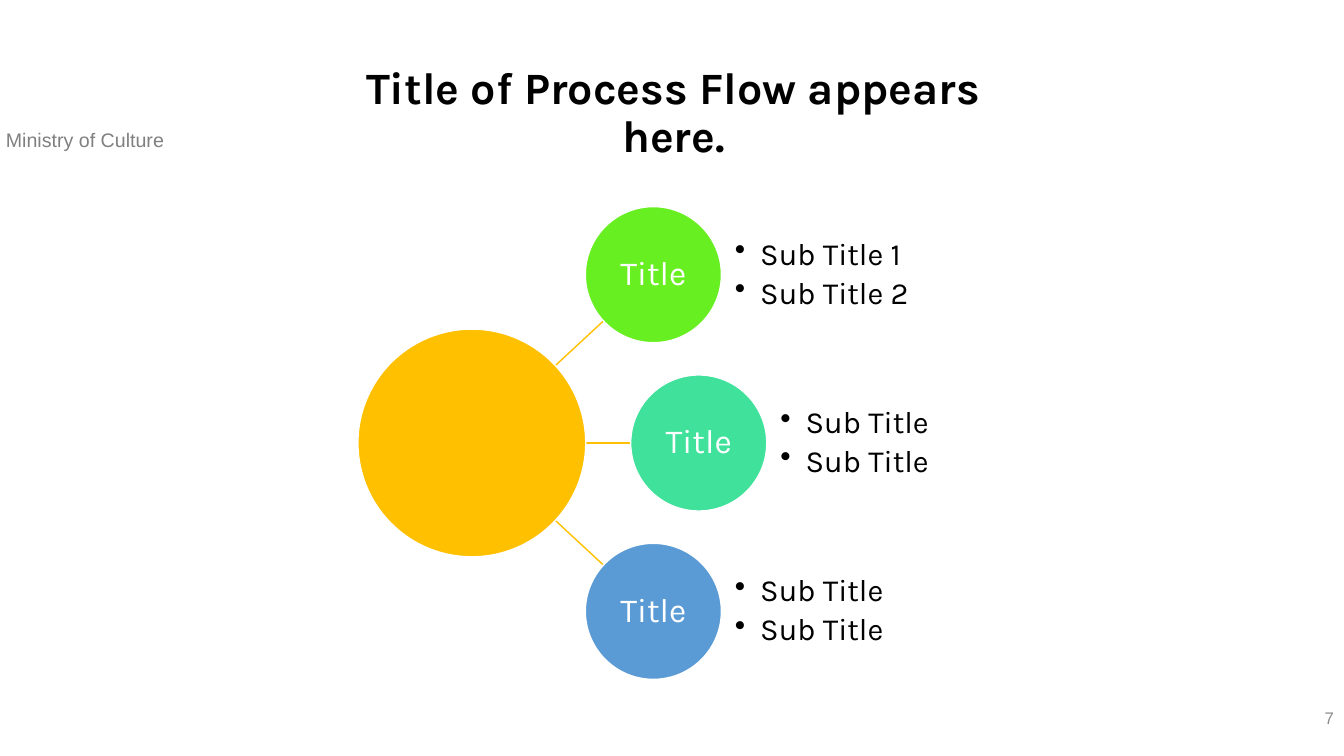
"""Build a slide with a radial process flow: one hub, three titled nodes and their points."""
from math import hypot

from lxml import etree
from pptx import Presentation
from pptx.dml.color import RGBColor
from pptx.enum.shapes import MSO_CONNECTOR, MSO_SHAPE
from pptx.enum.text import MSO_ANCHOR, PP_ALIGN
from pptx.oxml.ns import qn
from pptx.util import Inches, Pt

OVAL = MSO_SHAPE.OVAL
STRAIGHT = MSO_CONNECTOR.STRAIGHT
TOP, MIDDLE = MSO_ANCHOR.TOP, MSO_ANCHOR.MIDDLE
LEFT, CENTER, RIGHT = PP_ALIGN.LEFT, PP_ALIGN.CENTER, PP_ALIGN.RIGHT

WHITE = RGBColor(0xFF, 0xFF, 0xFF)
BLACK = RGBColor(0x00, 0x00, 0x00)
GRAY = RGBColor(0x80, 0x80, 0x80)
PALE_GRAY = RGBColor(0x8C, 0x8C, 0x8C)
AMBER = RGBColor(0xFF, 0xC0, 0x00)
LIME = RGBColor(0x67, 0xEF, 0x21)
MINT = RGBColor(0x3F, 0xE1, 0x9B)
BLUE = RGBColor(0x5B, 0x9B, 0xD5)

HEADING_FONT, FOOTER_FONT = "Karla", "Arial"
FLOW_BOX = (3.55, 2.05, 6.23, 4.69)
HUB_SIZE, NODE_SIZE = 2.26, 1.35
NODES = [
    ("Title", LIME, ["Sub Title 1", "Sub Title 2"]),
    ("Title", MINT, ["Sub Title", "Sub Title"]),
    ("Title", BLUE, ["Sub Title", "Sub Title"]),
]
NODE_REACH = [1.8, 2.25, 1.8]


def style_paragraph(para, text, size, color, align, font=HEADING_FONT, bold=False):
    """Fill a paragraph with text in one style."""
    para.text = text
    para.alignment = align
    para.font.name = font
    para.font.size = Pt(size)
    para.font.bold = bold
    para.font.color.rgb = color


def add_label(page, box, text, size, color, align, font, anchor=TOP, bold=False):
    """Add a one-paragraph text box and return its paragraph."""
    frame = page.shapes.add_textbox(*map(Inches, box)).text_frame
    frame.word_wrap = True
    frame.vertical_anchor = anchor
    style_paragraph(frame.paragraphs[0], text, size, color, align, font, bold)
    return frame.paragraphs[0]


def add_circle(page, center, size, color):
    """Add a filled circle with a white outline around a centre."""
    x, y = center
    circle = page.shapes.add_shape(
        OVAL, Inches(x - size / 2), Inches(y - size / 2), Inches(size), Inches(size))
    circle.shadow.inherit = False
    circle.fill.solid()
    circle.fill.fore_color.rgb = color
    circle.line.color.rgb = WHITE
    circle.line.width = Pt(1)
    return circle


def add_spoke(page, hub, node):
    """Draw the line from under the hub to the edge of a node."""
    across, down = node[0] - hub[0], node[1] - hub[1]
    start = 0.35 * HUB_SIZE / across
    end = 1 - NODE_SIZE / 2 / hypot(across, down)
    points = [Inches(value) for share in (start, end)
              for value in (hub[0] + share * across, hub[1] + share * down)]
    spoke = page.shapes.add_connector(STRAIGHT, *points)
    spoke.line.color.rgb = AMBER
    spoke.line.width = Pt(1)
    etree.SubElement(spoke._element.spPr, qn("a:effectLst"))


def add_points(page, box, points):
    """Add a bulleted list centred vertically in its box."""
    frame = page.shapes.add_textbox(*map(Inches, box)).text_frame
    frame.word_wrap = True
    frame.vertical_anchor = MIDDLE
    frame.margin_left = frame.margin_right = frame.margin_top = frame.margin_bottom = 0
    for index, point in enumerate(points):
        para = frame.add_paragraph() if index else frame.paragraphs[0]
        para.line_spacing = 0.9
        para.space_after = Pt(4)
        properties = para._p.get_or_add_pPr()
        properties.set("marL", str(Inches(0.25)))
        properties.set("indent", str(-Inches(0.25)))
        etree.SubElement(properties, qn("a:buChar")).set("char", "•")
        style_paragraph(para, point, 22, BLACK, LEFT)


def add_node(page, center, title, color, points):
    """Add a titled circle with its points on the right."""
    frame = add_circle(page, center, NODE_SIZE, color).text_frame
    frame.word_wrap = True
    frame.vertical_anchor = MIDDLE
    frame.margin_left = frame.margin_right = frame.margin_top = frame.margin_bottom = Inches(0.02)
    style_paragraph(frame.paragraphs[0], title, 24, WHITE, CENTER)
    frame.paragraphs[0].line_spacing = 0.9
    box = (center[0] + 0.6 * NODE_SIZE, center[1] - NODE_SIZE / 2, 1.5 * NODE_SIZE, NODE_SIZE)
    add_points(page, box, points)


def add_flow(page, box):
    """Place the hub, its spokes and its nodes in a box."""
    left, top, _, height = box
    hub = (left + HUB_SIZE / 2, top + height / 2)
    pitch = (height - NODE_SIZE) / (len(NODES) - 1)
    centers = [(hub[0] + reach, top + NODE_SIZE / 2 + row * pitch)
               for row, reach in enumerate(NODE_REACH)]
    for center in centers:
        add_spoke(page, hub, center)
    add_circle(page, hub, HUB_SIZE, AMBER)
    for center, node in zip(centers, NODES):
        add_node(page, center, *node)


def main():
    """Build the slide and save it."""
    deck = Presentation()
    deck.slide_width, deck.slide_height = Inches(13.33), Inches(7.5)
    page = deck.slides.add_slide(deck.slide_layouts[6])
    add_label(page, (-0.04, 1.22, 2.9, 0.34), "Ministry of Culture", 14, GRAY, LEFT, FOOTER_FONT)
    add_flow(page, FLOW_BOX)
    add_label(page, (10.33, 6.92, 3, 0.4), "7", 12, PALE_GRAY, RIGHT, FOOTER_FONT, MIDDLE)
    title = add_label(page, (3.28, 0.6, 6.8, 1.07), "Title of Process Flow appears here.",
                      32, BLACK, CENTER, HEADING_FONT, bold=True)
    title.line_spacing = 0.9
    deck.save("out.pptx")


if __name__ == "__main__":
    main()
